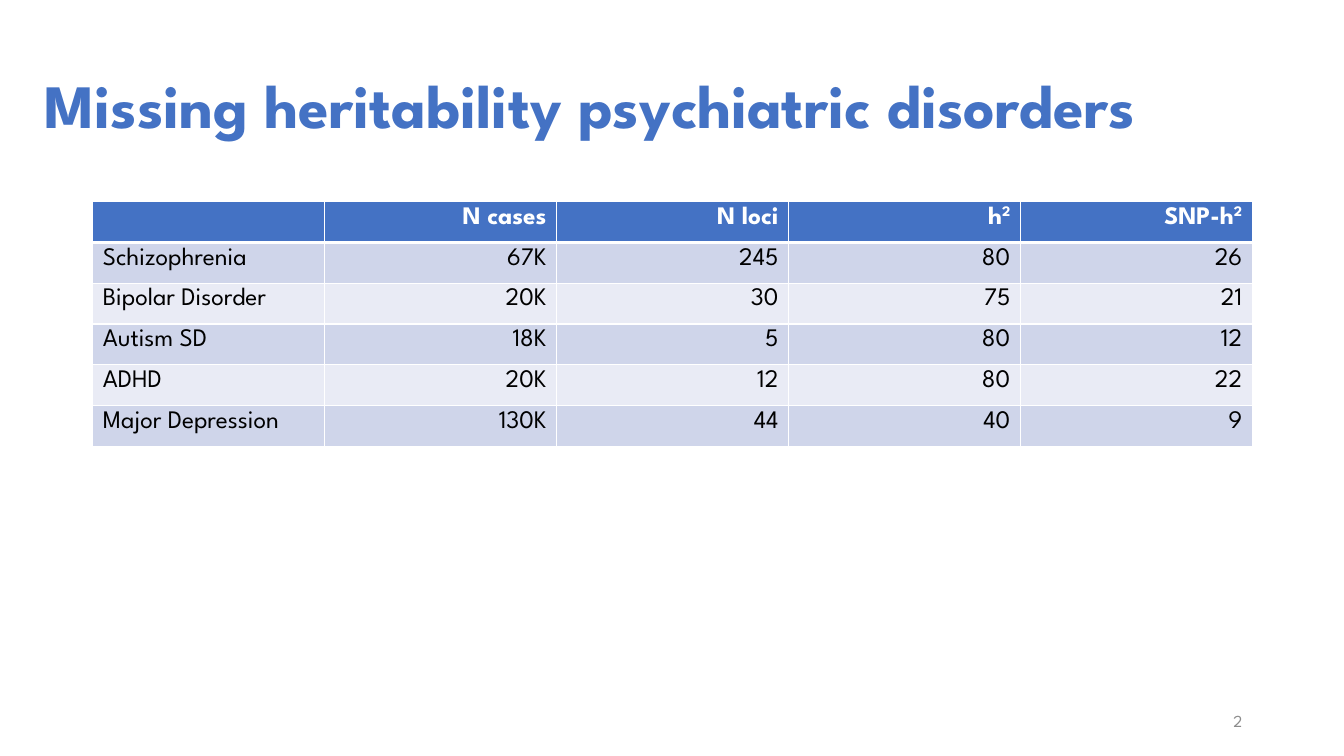
import pptx
import pptx.dml.color
import pptx.enum.text
import pptx.oxml
import pptx.oxml.ns
import pptx.util

PX = 9144
FONT = "League Spartan"
BLUE, WHITE, BLACK, GREY = "4472C4", "FFFFFF", "000000", "8C8C8C"
BANDS = ("CFD5EA", "E9EBF5")
LEFT, RIGHT = pptx.enum.text.PP_ALIGN.LEFT, pptx.enum.text.PP_ALIGN.RIGHT
DISORDERS = [
    ("", "N cases", "N loci", "h²", "SNP-h²"),
    ("Schizophrenia", "67K", "245", "80", "26"),
    ("Bipolar Disorder", "20K", "30", "75", "21"),
    ("Autism SD", "18K", "5", "80", "12"),
    ("ADHD", "20K", "12", "80", "22"),
    ("Major Depression", "130K", "44", "40", "9"),
]


def rgb(color):
    """Turn a hex string into a colour."""
    return pptx.dml.color.RGBColor.from_string(color)


def emu(box):
    """Turn a box in px into EMU lengths."""
    return [pptx.util.Emu(length * PX) for length in box]


def write(paragraph, text, size, color, bold=False, align=LEFT):
    """Write text, raising a squared sign as superscript."""
    paragraph.alignment = align
    base, squared, _ = text.partition("²")
    if base:
        paragraph.add_run().text = base
    if squared:
        exponent = paragraph.add_run()
        exponent.text = "2"
        exponent._r.get_or_add_rPr().set("baseline", "30000")
    font = paragraph.font
    font.name, font.size, font.bold = FONT, pptx.util.Pt(size), bold
    font.color.rgb = rgb(color)


def add_label(slide, box, text, size, color, **style):
    """Place one vertically centred line of text in the box."""
    frame = slide.shapes.add_textbox(*emu(box)).text_frame
    frame.word_wrap = True
    frame.vertical_anchor = pptx.enum.text.MSO_ANCHOR.MIDDLE
    write(frame.paragraphs[0], text, size, color, **style)
    return frame


def add_borders(cell, top, bottom):
    """Draw white cell borders with the given top and bottom points."""
    properties = cell._tc.get_or_add_tcPr()
    for side, points in (("L", 1), ("R", 1), ("T", top), ("B", bottom)):
        properties.append(pptx.oxml.parse_xml(
            f'<a:ln{side} {pptx.oxml.ns.nsdecls("a")} w="{points * 12700}">'
            f'<a:solidFill><a:srgbClr val="{WHITE}"/></a:solidFill></a:ln{side}>'))


def add_disorder_table(slide, box):
    """Fill the box with an even grid of disorders and their figures."""
    table = slide.shapes.add_table(len(DISORDERS), len(DISORDERS[0]), *emu(box)).table
    for r, disorder in enumerate(DISORDERS):
        header = r == 0
        for c, text in enumerate(disorder):
            cell = table.cell(r, c)
            add_borders(cell, 3 if r == 1 else 1, 3 if header else 1)
            cell.fill.solid()
            cell.fill.fore_color.rgb = rgb(BLUE if header else BANDS[(r - 1) % 2])
            write(cell.text_frame.paragraphs[0], text, 18,
                  WHITE if header else BLACK, bold=header, align=RIGHT if c else LEFT)


def main():
    """Build the slide and save it."""
    deck = pptx.Presentation()
    deck.slide_width, deck.slide_height = emu((1333, 750))
    slide = deck.slides.add_slide(deck.slide_layouts[6])
    title = add_label(slide, (34, 35, 1242, 145),
                      "Missing heritability psychiatric disorders", 44, BLUE, bold=True)
    title.paragraphs[0].line_spacing = 0.9
    add_disorder_table(slide, (92, 200, 1150, 243))
    add_label(slide, (942, 695, 300, 40), "2", 12, GREY, align=RIGHT)
    deck.save("out.pptx")


if __name__ == "__main__":
    main()
